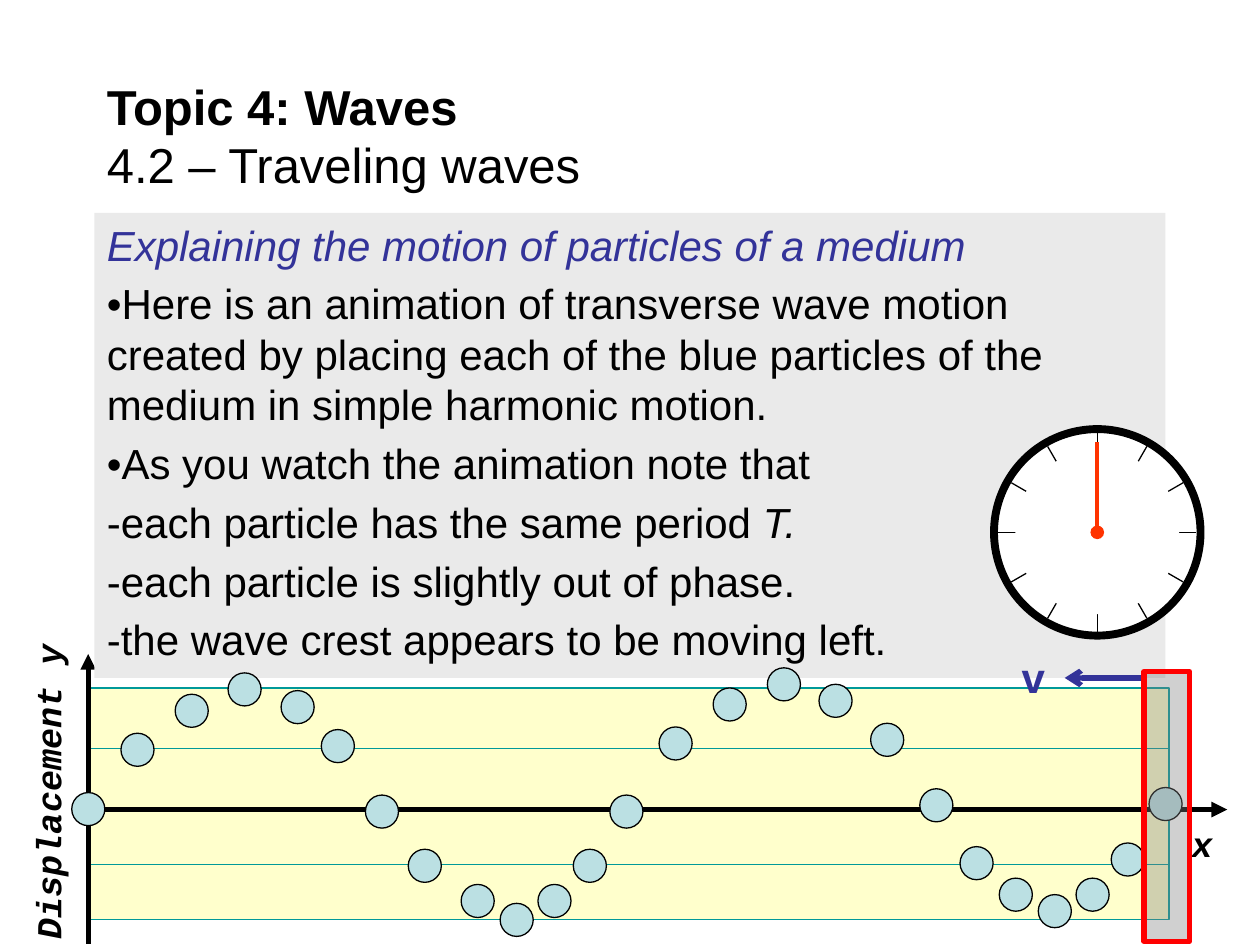
import math

import pptx
import pptx.dml.color
import pptx.enum.shapes
import pptx.enum.text
import pptx.oxml
import pptx.oxml.ns
import pptx.util

Pt = pptx.util.Pt
RGB = pptx.dml.color.RGBColor
Shape = pptx.enum.shapes.MSO_SHAPE
Align = pptx.enum.text.PP_ALIGN
Anchor = pptx.enum.text.MSO_ANCHOR
qn = pptx.oxml.ns.qn

BLACK, WHITE = RGB(0, 0, 0), RGB(255, 255, 255)
INDIGO = RGB(0x33, 0x33, 0x99)
TEAL = RGB(0x00, 0x99, 0x99)
CREAM = RGB(0xFF, 0xFF, 0xCC)
PANEL = RGB(0xEA, 0xEA, 0xEA)
PARTICLE = RGB(0xBB, 0xE0, 0xE3)
ORANGE = RGB(0xFF, 0x33, 0x00)
RED = RGB(0xFF, 0, 0)
GRAY = RGB(0x80, 0x80, 0x80)

# Content: a paragraph is a list of (text, changed format) runs
TITLE = [[("Topic 4: Waves", {"bold": True}), ("\v4.2 – Traveling waves", {})]]
BODY = [
    [("Explaining the motion of particles of a medium", {"italic": True, "color": INDIGO})],
    [("•Here is an animation of transverse wave motion created by placing each of "
      "the blue particles of the medium in simple harmonic motion.", {})],
    [("•As you watch the animation note that", {})],
    [("-each particle has the same period ", {}), ("T.", {"italic": True})],
    [("-each particle is slightly out of phase.", {})],
    [("-the wave crest appears to be moving left.", {})],
]
Y_LABEL, X_LABEL, VELOCITY = ([[(label, {})]] for label in ("Displacement y", "x", "v"))

# Left and top of each particle
PARTICLES = [
    (41, 452.9), (69.1, 419), (100.1, 396.7), (130.3, 384.5), (160.6, 394.6),
    (183.6, 416.9), (208.8, 454.3), (233.3, 485.3), (263.5, 505.4), (285.8, 516.2),
    (307.4, 505.4), (327.6, 485.3), (348.5, 454.3), (376.6, 415.4), (407.5, 393.1),
    (438.5, 381.6), (468, 391), (497.5, 413.3), (525.6, 450.7), (548.6, 483.8),
    (571, 501.8), (593.3, 511.2), (614.9, 501.8), (635, 481.7), (656.6, 450),
]
PARTICLE_SIZE = 18.9
GRID_LEFT, GRID_RIGHT = 51, 668
GRID_HEIGHTS = [427.7, 493.9]
CLOCK_X, CLOCK_Y = 627, 304.2
CLOCK_RADIUS, TICK_OUTER, TICK_INNER = 59, 56.7, 46.8

deck = pptx.Presentation()
deck.slide_width, deck.slide_height = Pt(720), Pt(540)
slide = deck.slides.add_slide(deck.slide_layouts[6])


def write(box, paragraphs, size, font="Arial", color=BLACK, bold=False, italic=False,
          align=Align.LEFT, anchor=Anchor.TOP, before=0, wrap=True):
    frame = box.text_frame
    frame.word_wrap, frame.vertical_anchor = wrap, anchor
    for i, runs in enumerate(paragraphs):
        paragraph = frame.add_paragraph() if i else frame.paragraphs[0]
        paragraph.alignment, paragraph.space_before = align, Pt(before)
        for text, change in runs:
            if text.startswith("\v"):
                paragraph.add_line_break()
            run = paragraph.add_run()
            run.text = text.lstrip("\v")
            run.font.name, run.font.size = font, Pt(size)
            run.font.bold = change.get("bold", bold)
            run.font.italic = change.get("italic", italic)
            run.font.color.rgb = change.get("color", color)


def add_text(left, top, width, height, paragraphs, size, **style):
    box = slide.shapes.add_textbox(Pt(left), Pt(top), Pt(width), Pt(height))
    write(box, paragraphs, size, **style)
    return box


def add_block(kind, left, top, width, height, fill, line=None, weight=0.75):
    block = slide.shapes.add_shape(kind, Pt(left), Pt(top), Pt(width), Pt(height))
    block.shadow.inherit = False
    block.fill.solid()
    block.fill.fore_color.rgb = fill
    if line is None:
        block.line.fill.background()
    else:
        block.line.color.rgb, block.line.width = line, Pt(weight)
    return block


def add_disc(x, y, radius, fill, line=None, weight=0.75):
    return add_block(Shape.OVAL, x - radius, y - radius, 2 * radius, 2 * radius,
                     fill, line, weight)


def add_line(x1, y1, x2, y2, color, weight=0.75, head=None):
    line = slide.shapes.add_connector(pptx.enum.shapes.MSO_CONNECTOR.STRAIGHT,
                                      Pt(x1), Pt(y1), Pt(x2), Pt(y2))
    line.line.color.rgb, line.line.width = color, Pt(weight)
    if head:
        line.line._get_or_add_ln().append(
            pptx.oxml.parse_xml('<a:tailEnd %s type="%s"/>' % (pptx.oxml.ns.nsdecls("a"), head)))
    line._element.spPr.append(pptx.oxml.parse_xml(
        "<a:effectLst %s/>" % pptx.oxml.ns.nsdecls("a")))


# Graph: labels, area, grid lines and axes
label_style = {"font": "Courier New", "bold": True, "italic": True}
y_label = add_text(-70.6, 437, 195.1, 31, Y_LABEL, 20, align=Align.CENTER, **label_style)
y_label.rotation = 270
add_text(673.9, 466.6, 26.6, 31, X_LABEL, 20, wrap=False, **label_style)
add_block(Shape.RECTANGLE, GRID_LEFT, 393.1, GRID_RIGHT - GRID_LEFT, 132.5, CREAM, TEAL)
for y in GRID_HEIGHTS:
    add_line(GRID_LEFT, y, GRID_RIGHT, y, TEAL)
add_line(50.4, 539.3, 50.4, 373.7, BLACK, 3, "triangle")
add_line(49, 462.6, 701.3, 462.6, BLACK, 3, "triangle")

# Explanation panel and title
panel = add_block(Shape.RECTANGLE, 54, 121.7, 612, 265.7, PANEL)
write(panel, BODY, 24, before=4.8)
add_text(54, 41.8, 612, 70.6, TITLE, 28, anchor=Anchor.MIDDLE)

# Particles of the medium
for left, top in PARTICLES:
    add_block(Shape.OVAL, left, top, PARTICLE_SIZE, PARTICLE_SIZE, PARTICLE, BLACK)

# Clock: face, diameters whose middles are masked into ticks, hand
add_disc(CLOCK_X, CLOCK_Y, CLOCK_RADIUS, WHITE, BLACK, 4.5)
for step in range(6):
    dx = TICK_OUTER * math.cos(math.radians(30 * step))
    dy = TICK_OUTER * math.sin(math.radians(30 * step))
    add_line(CLOCK_X - dx, CLOCK_Y - dy, CLOCK_X + dx, CLOCK_Y + dy, BLACK)
add_disc(CLOCK_X, CLOCK_Y, TICK_INNER, WHITE)
add_line(CLOCK_X, 252.7, CLOCK_X, CLOCK_Y, ORANGE, 2.25)
add_disc(CLOCK_X, CLOCK_Y, 3.9, ORANGE)

# Translucent marker over the last particle
marker = add_block(Shape.RECTANGLE, 653.8, 383.8, 25.9, 154.1, GRAY, RED, 3)
marker_color = marker._element.spPr.find(qn("a:solidFill")).find(qn("a:srgbClr"))
marker_color.append(pptx.oxml.parse_xml(
    '<a:alpha %s val="37000"/>' % pptx.oxml.ns.nsdecls("a")))

# Wave velocity
add_line(652.3, 387.4, 608.4, 387.4, INDIGO, 3, "arrow")
add_text(576.7, 368.6, 29.5, 36, VELOCITY, 24, color=INDIGO, bold=True, before=12)

deck.save("out.pptx")
